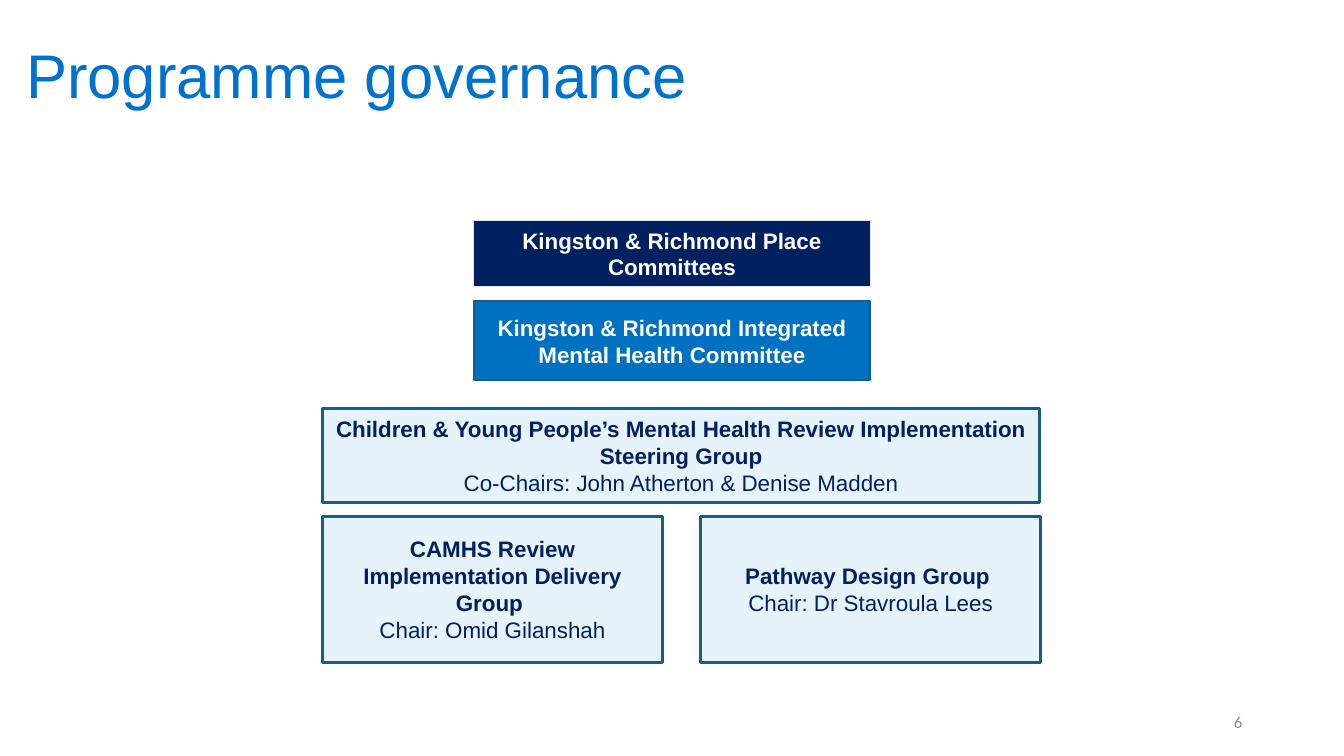
from dataclasses import dataclass

import pptx
import pptx.dml.color
import pptx.enum.shapes
import pptx.enum.text
import pptx.util

Inches = pptx.util.Inches
Pt = pptx.util.Pt
Align = pptx.enum.text.PP_ALIGN

COLOURS = {
    "title": "0072CE",
    "navy": "002060",
    "blue": "0070C0",
    "pale": "E7F3FA",
    "border": "156082",
    "white": "FFFFFF",
    "grey": "8C8C8C",
}


@dataclass(frozen=True)
class Group:
    """One governance body; area is left, top, width, height in inches."""
    area: tuple[float, float, float, float]
    name: str
    chair: str = ""
    fill: str = "pale"
    text: str = "navy"
    border: float = 2.25


TIER_LEFT, TIER_WIDTH = 4.7, 3.93
TEAM_LEFT, TEAM_TOP, TEAM_WIDTH, TEAM_HEIGHT, TEAM_STEP = 3.2, 5.12, 3.37, 1.45, 3.75

GROUPS = [
    Group((TEAM_LEFT, 4.05, 7.11, 0.94),
          "Children & Young People’s Mental Health Review Implementation Steering Group",
          "Co-Chairs: John Atherton & Denise Madden"),
    Group((TIER_LEFT, 2.99, TIER_WIDTH, 0.78),
          "Kingston & Richmond Integrated Mental Health Committee",
          fill="blue", text="white", border=1.5),
    Group((TIER_LEFT, 2.19, TIER_WIDTH, 0.65),
          "Kingston & Richmond Place Committees",
          fill="navy", text="white", border=0),
    Group((TEAM_LEFT, TEAM_TOP, TEAM_WIDTH, TEAM_HEIGHT),
          "CAMHS Review Implementation Delivery Group ", "Chair: Omid Gilanshah"),
    Group((TEAM_LEFT + TEAM_STEP, TEAM_TOP, TEAM_WIDTH, TEAM_HEIGHT),
          "Pathway Design Group ", "Chair: Dr Stavroula Lees"),
]


def colour(name: str) -> pptx.dml.color.RGBColor:
    return pptx.dml.color.RGBColor.from_string(COLOURS[name])


def write(para, text: str, align, ink: str, **font_format) -> None:
    """Put text in a paragraph and apply its font format."""
    para.alignment = align
    span = para.add_run()
    span.text = text
    for attribute, value in font_format.items():
        setattr(span.font, attribute, value)
    span.font.color.rgb = colour(ink)


def prepare_frame(box, **margins):
    frame = box.text_frame
    settings = {"word_wrap": True, "vertical_anchor": pptx.enum.text.MSO_ANCHOR.MIDDLE}
    for attribute, value in {**settings, **margins}.items():
        setattr(frame, attribute, value)
    return frame


def add_label(page, area: tuple[float, float, float, float], text: str,
              align, ink: str, **font_format):
    box = page.shapes.add_textbox(*map(Inches, area))
    para = prepare_frame(box).paragraphs[0]
    write(para, text, align, ink, **font_format)
    return para


def add_group(page, group: Group) -> None:
    box = page.shapes.add_shape(pptx.enum.shapes.MSO_SHAPE.RECTANGLE,
                                *map(Inches, group.area))
    box.shadow.inherit = False
    box.fill.solid()
    box.fill.fore_color.rgb = colour(group.fill)
    if group.border:
        box.line.color.rgb = colour("border")
        box.line.width = Pt(group.border)
    else:
        box.line.fill.background()

    sides = ("left", "top", "right", "bottom")
    frame = prepare_frame(box, **{f"margin_{side}": Inches(0.1) for side in sides})
    font_format = {"name": "Arial", "size": Pt(16)}
    write(frame.paragraphs[0], group.name, Align.CENTER, group.text,
          bold=True, **font_format)
    if group.chair:
        write(frame.add_paragraph(), group.chair, Align.CENTER, group.text,
              bold=False, **font_format)


def main() -> None:
    deck = pptx.Presentation()
    deck.slide_width, deck.slide_height = Inches(13.33), Inches(7.5)
    page = deck.slides.add_slide(deck.slide_layouts[6])

    add_label(page, (9.42, 6.96, 3, 0.4), "6", Align.RIGHT, "grey",
              name="Calibri", size=Pt(12))
    title = add_label(page, (0.16, 0.39, 11.62, 0.77), "Programme governance",
                      Align.LEFT, "title", name="Arial", size=Pt(44))
    title.line_spacing = 0.9
    for group in GROUPS:
        add_group(page, group)
    deck.save("out.pptx")


if __name__ == "__main__":
    main()
